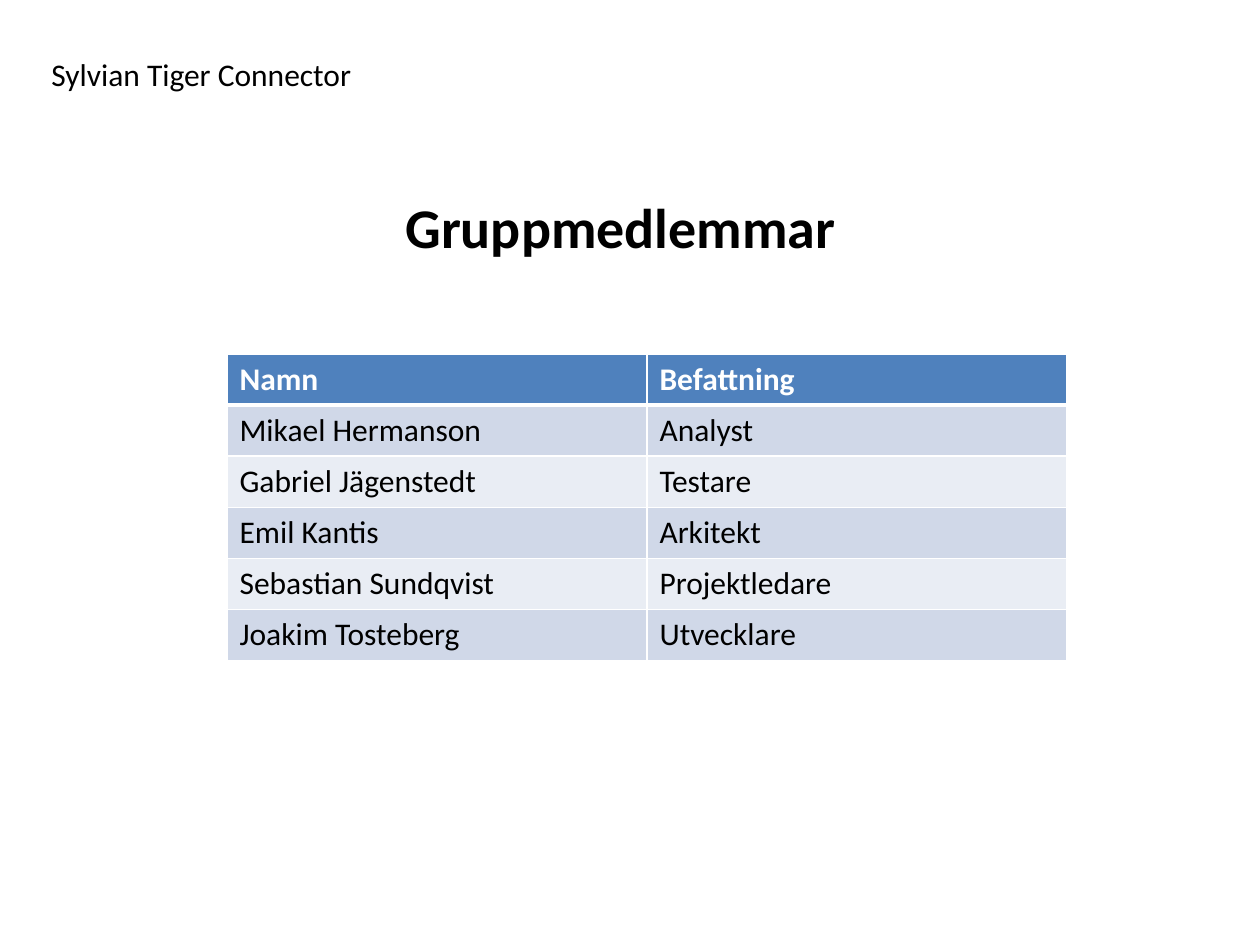
from dataclasses import dataclass

from lxml.etree import SubElement
from pptx import Presentation
from pptx.dml.color import RGBColor
from pptx.enum.text import MSO_AUTO_SIZE
from pptx.oxml.ns import qn
from pptx.util import Emu, Pt

FONT = "Calibri"
WHITE, BLACK = "FFFFFF", "000000"
HEAD, BANDS = "4F81BD", ("D0D8E8", "E9EDF4")
ROW_H, COL_W = 51, 420


@dataclass
class Label:
    text: str
    left: int
    top: int
    width: int
    height: int
    size: int
    bold: bool = False


LABELS = [
    Label("Sylvian Tiger Connector", 39, 49, 354, 51, 18),
    Label("Gruppmedlemmar", 393, 186, 472, 81, 32, True),
]

MEMBERS = [
    ("Namn", "Befattning"),
    ("Mikael Hermanson", "Analyst"),
    ("Gabriel Jägenstedt", "Testare"),
    ("Emil Kantis", "Arkitekt"),
    ("Sebastian Sundqvist", "Projektledare"),
    ("Joakim Tosteberg", "Utvecklare"),
]


def px(n: int) -> Emu:
    return Emu(round(n * 914400 / 126))


def color(code: str) -> RGBColor:
    return RGBColor.from_string(code)


def write(frame, text: str, size: int, tint: str, bold: bool) -> None:
    run = frame.paragraphs[0].add_run()
    run.text = text
    font = run.font
    font.name, font.size, font.bold = FONT, Pt(size), bold
    font.color.rgb = color(tint)


def add_label(slide, item: Label) -> None:
    box = slide.shapes.add_textbox(
        px(item.left), px(item.top), px(item.width), px(item.height))
    frame = box.text_frame
    frame.word_wrap = True
    frame.auto_size = MSO_AUTO_SIZE.SHAPE_TO_FIT_TEXT
    write(frame, item.text, item.size, BLACK, item.bold)


def add_edges(cell, top: int, low: int) -> None:
    """Draw white cell borders; top and low are widths in points."""
    props = cell._tc.get_or_add_tcPr()
    for side, width in (("L", 1), ("R", 1), ("T", top), ("B", low)):
        line = SubElement(props, qn(f"a:ln{side}"), w=str(Pt(width)))
        fill = SubElement(line, qn("a:solidFill"))
        SubElement(fill, qn("a:srgbClr"), val=WHITE)


def add_members(slide, left: int, top: int) -> None:
    rows, cols = len(MEMBERS), len(MEMBERS[0])
    table = slide.shapes.add_table(
        rows, cols, px(left), px(top),
        px(cols * COL_W), px(rows * ROW_H)).table
    for r, texts in enumerate(MEMBERS):
        head = r == 0
        for c, text in enumerate(texts):
            cell = table.cell(r, c)
            add_edges(cell, 3 if r == 1 else 1, 3 if head else 1)
            cell.fill.solid()
            cell.fill.fore_color.rgb = color(HEAD if head else BANDS[(r - 1) % 2])
            write(cell.text_frame, text, 18, WHITE if head else BLACK, head)


def main() -> None:
    deck = Presentation()
    deck.slide_width, deck.slide_height = px(1260), px(945)
    slide = deck.slides.add_slide(deck.slide_layouts[6])
    add_members(slide, 227, 354)
    for item in LABELS:
        add_label(slide, item)
    deck.save("out.pptx")


if __name__ == "__main__":
    main()
